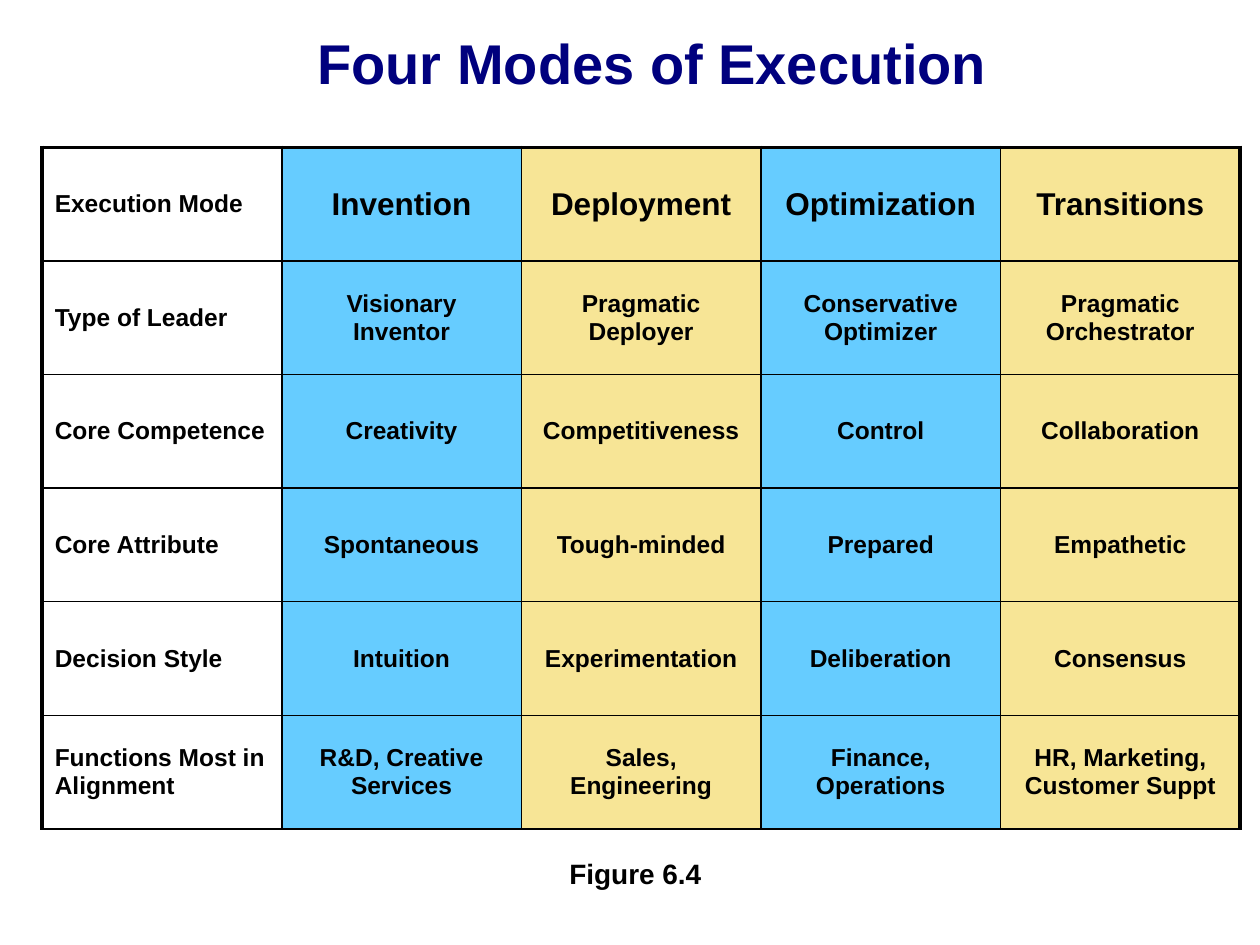
from dataclasses import dataclass

from lxml.etree import SubElement as Sub
from pptx import Presentation
from pptx.dml.color import RGBColor as Rgb
from pptx.enum.text import MSO_ANCHOR as Anchor, MSO_AUTO_SIZE as Fit, PP_ALIGN as Align
from pptx.oxml.ns import qn
from pptx.util import Cm, Pt


@dataclass(frozen=True)
class Theme:
    font: str = "Arial"
    navy: str = "00007E"
    black: str = "000000"
    blue: str = "66CCFF"
    sand: str = "F7E596"
    title: int = 32
    mode: int = 18
    body: int = 14
    note: int = 16
    thick: float = 2.25
    thin: float = 1


THEME = Theme()

ROWS = [
    ["Execution Mode", "Invention", "Deployment", "Optimization", "Transitions"],
    ["Type of Leader", "Visionary\vInventor", "Pragmatic Deployer",
     "Conservative Optimizer", "Pragmatic Orchestrator"],
    ["Core Competence", "Creativity", "Competitiveness", "Control", "Collaboration"],
    ["Core Attribute", "Spontaneous", "Tough-minded", "Prepared", "Empathetic"],
    ["Decision Style", "Intuition", "Experimentation", "Deliberation", "Consensus"],
    ["Functions Most in Alignment", "R&D, Creative Services", "Sales, Engineering",
     "Finance, Operations", "HR, Marketing, Customer Suppt"],
]


def apply(item, values):
    for name, value in values.items():
        setattr(item, name, value)


def write(frame, text, size, color, align):
    frame.text = text
    line = frame.paragraphs[0]
    line.alignment = align
    for run in line.runs:
        apply(run.font, {"name": THEME.font, "size": Pt(size), "bold": True})
        run.font.color.rgb = Rgb.from_string(color)
    return line


def add_title(slide, text):
    title = slide.shapes.title
    apply(title, {"left": Cm(2), "top": Cm(0.6), "width": Cm(22.3), "height": Cm(2.75)})
    line = write(title.text_frame, text, THEME.title, THEME.navy, Align.CENTER)
    line.line_spacing = 0.9
    apply(title.text_frame, {"vertical_anchor": Anchor.TOP, "auto_size": Fit.NONE})


def add_edge(cell, side, width):
    props = cell._tc.get_or_add_tcPr()
    edge = Sub(props, qn(f"a:ln{side}"), w=str(Pt(width)))
    fill = Sub(edge, qn("a:solidFill"))
    Sub(fill, qn("a:srgbClr"), val=THEME.black)


def add_cell(cell, text, row, col, last):
    head, label = row == 0, col == 0
    size = THEME.mode if head and not label else THEME.body
    align = Align.LEFT if label else Align.CENTER
    write(cell.text_frame, text, size, THEME.black, align)
    cell.vertical_anchor = Anchor.MIDDLE
    outer = {"L": label, "R": col == last, "T": head, "B": False}
    for side, bold in outer.items():
        add_edge(cell, side, THEME.thick if bold else THEME.thin)
    if label:
        cell.fill.background()
    else:
        cell.fill.solid()
        tint = THEME.blue if col % 2 else THEME.sand
        cell.fill.fore_color.rgb = Rgb.from_string(tint)


def add_grid(slide, rows):
    count = len(rows[0])
    wide, high = Cm(4.83), Cm(2.29)
    frame = slide.shapes.add_table(len(rows), count, Cm(0.85), Cm(2.97),
                                   wide * count, high * len(rows))
    table = frame.table
    apply(table, {"first_row": False, "horz_banding": False})
    for col in table.columns:
        col.width = wide
    for r, row in enumerate(rows):
        table.rows[r].height = high
        for c, text in enumerate(row):
            add_cell(table.cell(r, c), text, r, c, count - 1)


def add_note(slide, text):
    box = slide.shapes.add_textbox(Cm(11.23), Cm(17.15), Cm(3.2), Cm(0.94))
    write(box.text_frame, text, THEME.note, THEME.black, Align.LEFT)
    apply(box.text_frame, {"word_wrap": False, "auto_size": Fit.SHAPE_TO_FIT_TEXT})


def main():
    deck = Presentation()
    apply(deck, {"slide_width": Cm(25.4), "slide_height": Cm(19.05)})
    slide = deck.slides.add_slide(deck.slide_layouts[5])
    add_title(slide, "Four Modes of Execution")
    add_grid(slide, ROWS)
    add_note(slide, "Figure 6.4")
    deck.save("out.pptx")


if __name__ == "__main__":
    main()
